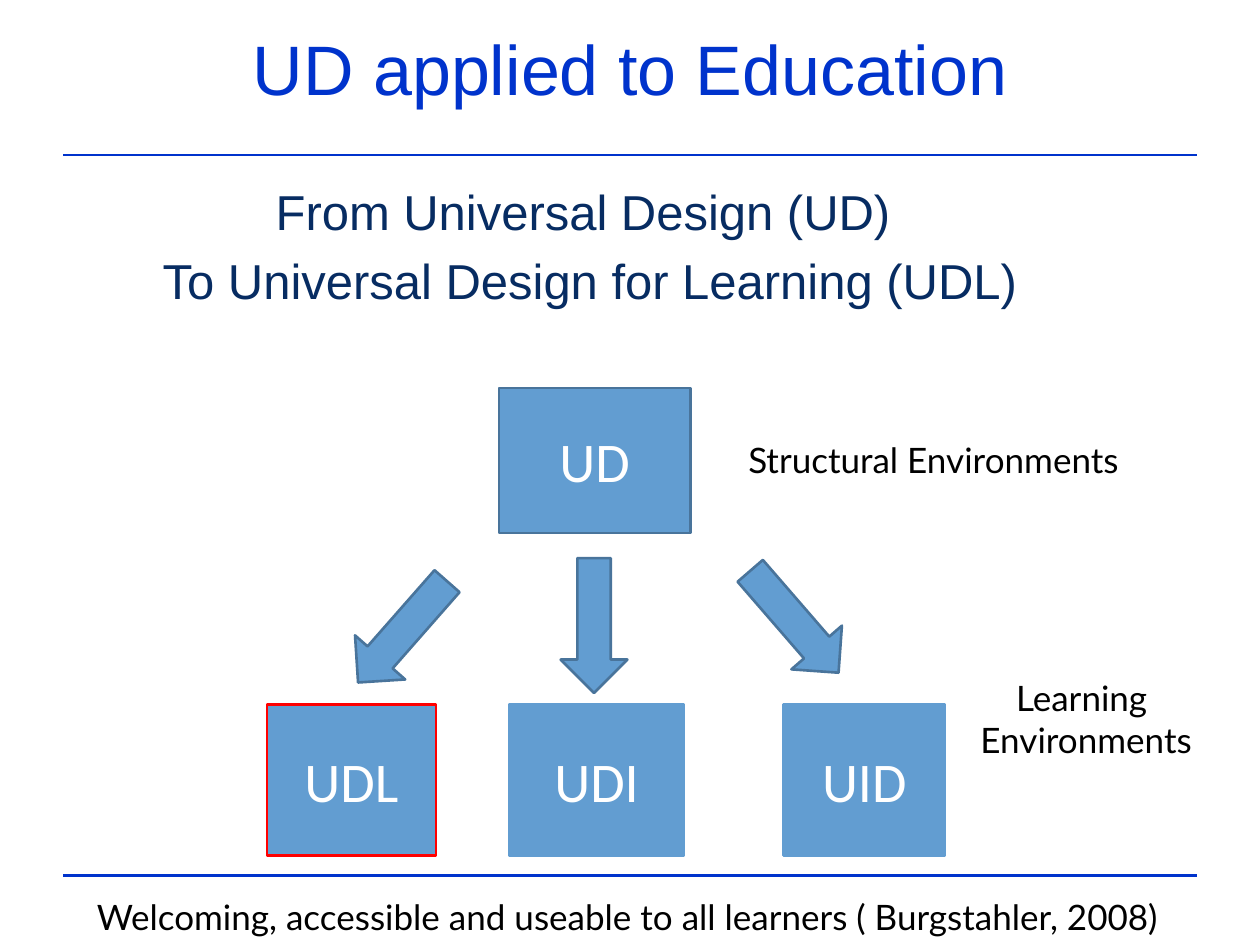
from dataclasses import dataclass
from typing import Optional

from lxml.etree import SubElement
from pptx import Presentation
from pptx.dml.color import RGBColor
from pptx.enum.shapes import MSO_CONNECTOR, MSO_SHAPE
from pptx.enum.text import MSO_ANCHOR, MSO_AUTO_SIZE, PP_ALIGN
from pptx.oxml.ns import qn
from pptx.util import Inches, Pt


@dataclass(frozen=True)
class Theme:
    rule: str = "0033CC"
    navy: str = "072C62"
    fill: str = "629DD1"
    edge: str = "49749B"
    alert: str = "FF0000"
    white: str = "FFFFFF"
    black: str = "000000"
    title: int = 40
    body: int = 28
    box: int = 32
    label: int = 20
    stroke: float = 1.5


THEME = Theme()


@dataclass(frozen=True)
class Style:
    font: str
    size: int
    color: str
    align: PP_ALIGN = PP_ALIGN.CENTER
    anchor: MSO_ANCHOR = MSO_ANCHOR.TOP
    wrap: bool = True
    indent: float = 0
    gap: int = 0


@dataclass(frozen=True)
class Area:
    left: float
    top: float
    width: float
    height: float

    def emu(self) -> list:
        return [Inches(n) for n in (self.left, self.top, self.width, self.height)]


@dataclass(frozen=True)
class Box:
    area: Area
    text: str
    edge: str


@dataclass(frozen=True)
class Arrow:
    left: float
    top: float
    turn: float


@dataclass(frozen=True)
class Note:
    area: Area
    lines: tuple
    style: Style


TITLE = Style("Arial", THEME.title, THEME.rule, anchor=MSO_ANCHOR.BOTTOM)
BODY = Style("Arial", THEME.body, THEME.navy, indent=0.28, gap=6)
NAME = Style("Calibri", THEME.box, THEME.white, anchor=MSO_ANCHOR.MIDDLE)
LABEL = Style("Lato", THEME.label, THEME.black, PP_ALIGN.LEFT, wrap=False)
MID = Style("Lato", THEME.label, THEME.black, wrap=False)

ROW = 5.59
TALL = 1.2
RULES = (1.23, 6.95)
BOXES = (
    Box(Area(3.96, 3.08, 1.52, 1.15), "UD", THEME.edge),
    Box(Area(2.12, ROW, 1.34, TALL), "UDL", THEME.alert),
    Box(Area(4.04, ROW, 1.39, TALL), "UDI", THEME.fill),
    Box(Area(6.22, ROW, 1.28, TALL), "UID", THEME.fill),
)
ARROWS = (
    Arrow(2.93, 4.48, 41.3),
    Arrow(4.45, 4.43, 0),
    Arrow(6.04, 4.4, 319.1),
)
NOTES = (
    Note(Area(0.5, 0.17, 9, 0.75), ("UD applied to Education",), TITLE),
    Note(
        Area(0.5, 1.39, 8.08, 4.2),
        ("From Universal Design (UD) ", "To Universal Design for Learning (UDL)"),
        BODY,
    ),
    Note(Area(5.84, 3.43, 3.19, 0.44), ("Structural Environments",), LABEL),
    Note(
        Area(0.67, 7.06, 8.86, 0.44),
        ("Welcoming, accessible and useable to all learners ( Burgstahler, 2008)",),
        LABEL,
    ),
    Note(Area(7.6, 5.32, 1.97, 0.77), ("Learning", " Environments"), MID),
)


def apply(item, values: dict) -> None:
    for key, value in values.items():
        setattr(item, key, value)


def write(frame, lines: tuple, style: Style) -> None:
    size = MSO_AUTO_SIZE.NONE if style.wrap else MSO_AUTO_SIZE.SHAPE_TO_FIT_TEXT
    apply(frame, {
        "word_wrap": style.wrap,
        "auto_size": size,
        "vertical_anchor": style.anchor,
    })
    for spot, line in enumerate(lines):
        para = frame.add_paragraph() if spot else frame.paragraphs[0]
        para.alignment = style.align
        if style.indent:
            para._p.get_or_add_pPr().set("marL", str(Inches(style.indent)))
        if spot:
            para.space_before = Pt(style.gap)
        run = para.add_run()
        run.text = line
        apply(run.font, {"name": style.font, "size": Pt(style.size)})
        run.font.color.rgb = RGBColor.from_string(style.color)


def stroke(line, color: str) -> None:
    line.color.rgb = RGBColor.from_string(color)
    line.width = Pt(THEME.stroke)


def draw_rule(slide, top: float) -> None:
    rule = slide.shapes.add_connector(
        MSO_CONNECTOR.STRAIGHT, Inches(0.5), Inches(top), Inches(9.5), Inches(top)
    )
    stroke(rule.line, THEME.rule)
    SubElement(rule._element.spPr, qn("a:effectLst"))


def draw_shape(slide, kind: MSO_SHAPE, area: Area, edge: str, turn: float = 0):
    shape = slide.shapes.add_shape(kind, *area.emu())
    shape.shadow.inherit = False
    shape.rotation = turn
    shape.fill.solid()
    shape.fill.fore_color.rgb = RGBColor.from_string(THEME.fill)
    stroke(shape.line, edge)
    return shape


def draw_box(slide, box: Box) -> None:
    shape = draw_shape(slide, MSO_SHAPE.RECTANGLE, box.area, box.edge)
    write(shape.text_frame, (box.text,), NAME)


def draw_arrow(slide, arrow: Arrow) -> None:
    area = Area(arrow.left, arrow.top, 0.53, 1.07)
    draw_shape(slide, MSO_SHAPE.DOWN_ARROW, area, THEME.edge, arrow.turn)


def draw_note(slide, note: Note, title: Optional[str] = None) -> None:
    shape = slide.shapes.add_textbox(*note.area.emu())
    write(shape.text_frame, note.lines, note.style)


def main() -> None:
    deck = Presentation()
    apply(deck, {"slide_width": Inches(10), "slide_height": Inches(7.5)})
    slide = deck.slides.add_slide(deck.slide_layouts[6])
    parts = (
        (draw_rule, RULES),
        (draw_note, NOTES),
        (draw_box, BOXES),
        (draw_arrow, ARROWS),
    )
    for draw, items in parts:
        for item in items:
            draw(slide, item)
    deck.save("out.pptx")


if __name__ == "__main__":
    main()
